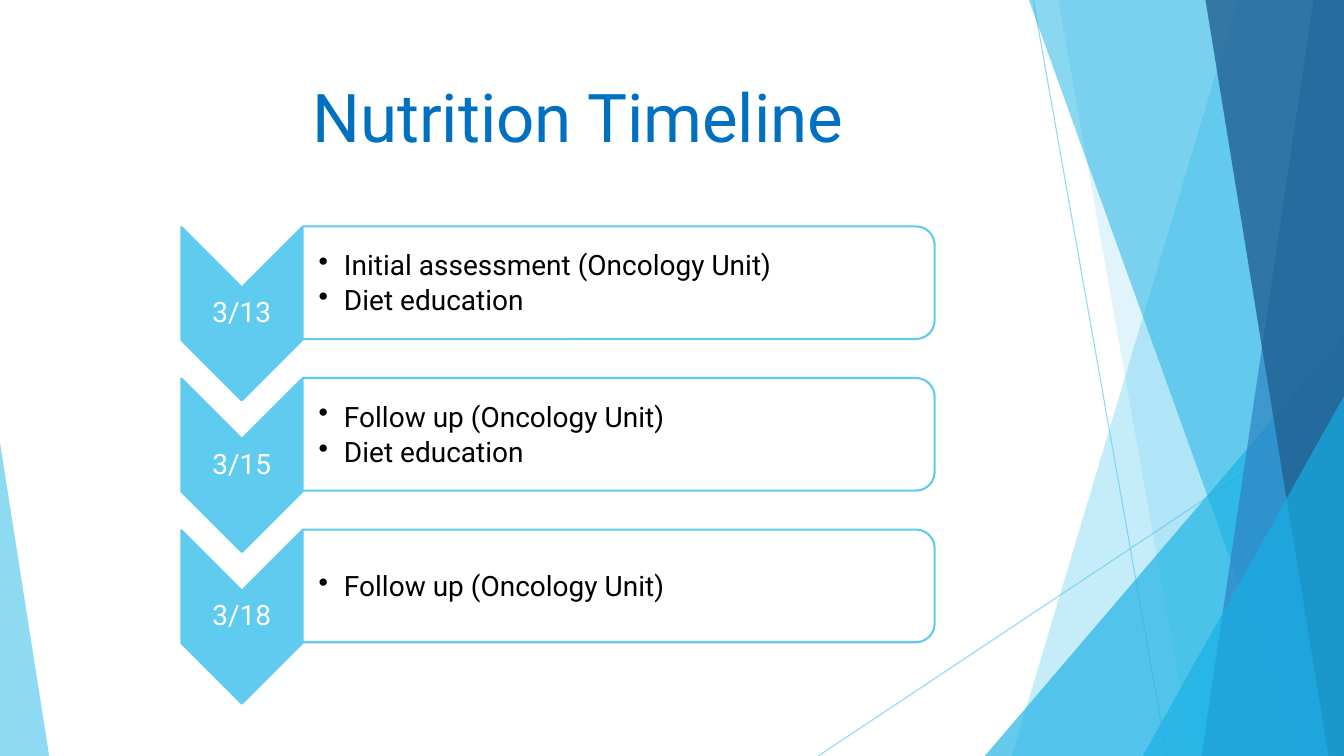
from pptx import Presentation
from pptx.dml.color import RGBColor
from pptx.enum.shapes import MSO_CONNECTOR, MSO_SHAPE
from pptx.enum.text import MSO_ANCHOR, PP_ALIGN
from pptx.oxml.ns import qn
from pptx.util import Cm, Pt
from lxml.etree import SubElement

WIDE, HIGH = 33.87, 19.05
STEP = 3.82
SKY, AQUA, BLUE, NAVY = "5FCBEF", "17B0E4", "2E83C3", "226292"
ROWS = [
    ("3/13", ["Initial assessment (Oncology Unit)", "Diet education"]),
    ("3/15", ["Follow up (Oncology Unit)", "Diet education"]),
    ("3/18", ["Follow up (Oncology Unit)"]),
]


def color(code):
    return RGBColor.from_string(code)


class Deck:
    font = "Roboto"

    def __init__(self):
        self.show = Presentation()
        self.show.slide_width, self.show.slide_height = Cm(WIDE), Cm(HIGH)
        self.slide = self.show.slides.add_slide(self.show.slide_layouts[6])
        self.shapes = self.slide.shapes

    def paint(self, fill, code, alpha=100):
        fill.solid()
        fill.fore_color.rgb = color(code)
        if alpha < 100:
            tone = fill._xPr.find(qn("a:solidFill"))[0]
            SubElement(tone, qn("a:alpha")).set("val", str(alpha * 1000))

    def line(self, *ends):
        rule = self.shapes.add_connector(MSO_CONNECTOR.STRAIGHT, *map(Cm, ends))
        rule.line.width = Pt(0.75)
        self.paint(rule.line.fill, SKY, 70)
        SubElement(rule._element.spPr, qn("a:effectLst"))

    def band(self, top, base, code, alpha):
        pen = self.shapes.build_freeform(Cm(top), 0)
        pen.add_line_segments([(Cm(x), Cm(y)) for x, y in
                               [(WIDE, 0), (WIDE, HIGH), (base, HIGH)]])
        self.finish(pen.convert_to_shape(), code, alpha)

    def wedge(self, left, top, width, apex, code, alpha):
        shape = self.shapes.add_shape(MSO_SHAPE.ISOSCELES_TRIANGLE,
                                      *map(Cm, (left, top, width, HIGH - top)))
        shape.adjustments[0] = apex
        self.finish(shape, code, alpha)

    def turned(self, kind, box, code):
        shape = self.shapes.add_shape(kind, *map(Cm, box))
        shape.rotation = 90
        self.finish(shape, code, edge=SKY)

    def finish(self, shape, code, alpha=100, edge=None):
        shape.shadow.inherit = False
        self.paint(shape.fill, code, alpha)
        if edge:
            shape.line.width = Pt(1.5)
            shape.line.color.rgb = color(edge)
        else:
            shape.line.fill.background()

    def text(self, box, lines, size, code, inset=0.03, bullet=False, after=0, space=0.9):
        frame = self.shapes.add_textbox(*map(Cm, box)).text_frame
        frame.word_wrap = True
        frame.vertical_anchor = MSO_ANCHOR.MIDDLE
        frame.margin_left = Cm(inset)
        frame.margin_right = frame.margin_top = frame.margin_bottom = Cm(0.03)
        frame.text = "\n".join(lines)
        for para in frame.paragraphs:
            para.alignment = PP_ALIGN.LEFT if bullet else PP_ALIGN.CENTER
            para.line_spacing = space
            para.space_after = Pt(after)
            if bullet:
                props = para._p.get_or_add_pPr()
                props.set("marL", str(Cm(0.64)))
                props.set("indent", str(-Cm(0.64)))
                SubElement(props, qn("a:buChar")).set("char", "•")
            for run in para.runs:
                run.font.name = self.font
                run.font.size = Pt(size)
                run.font.color.rgb = color(code)

    def row(self, drop, date, notes):
        self.turned(MSO_SHAPE.CHEVRON, (3.91, 6.38 + drop, 4.37, 3.05), SKY)
        self.text((4.57, 7.24 + drop, 3.05, 1.32), [date], 20, "FFFFFF", after=7)
        self.turned(MSO_SHAPE.ROUND_2_SAME_RECTANGLE,
                    (14.17, -0.84 + drop, 2.84, 15.93), "FFFFFF")
        self.text((7.62, 5.87 + drop, 15.8, 2.57), notes, 20, "000000",
                  inset=0.41, bullet=True, after=3.5)


def main():
    deck = Deck()
    deck.line(26.04, 0, 29.41, HIGH)
    deck.line(WIDE, 10.24, 20.62, HIGH)
    deck.band(31.19, 25.5, SKY, 36)
    deck.band(26.67, 30.05, SKY, 20)
    deck.wedge(24.82, 8.46, 9.05, 1, AQUA, 66)
    deck.band(25.93, 32.79, AQUA, 50)
    deck.band(33.1, 30.28, BLUE, 70)
    deck.band(30.38, 33.48, NAVY, 80)
    deck.wedge(28.8, 9.98, 5.07, 1, AQUA, 66)
    deck.wedge(0, 11.15, 1.24, 0, SKY, 70)
    deck.text((1.88, 1.7, 25.37, 2.44), ["Nutrition Timeline"], 48, "0070C0", space=1)
    for index, (date, notes) in enumerate(ROWS):
        deck.row(index * STEP, date, notes)
    deck.show.save("out.pptx")


if __name__ == "__main__":
    main()
